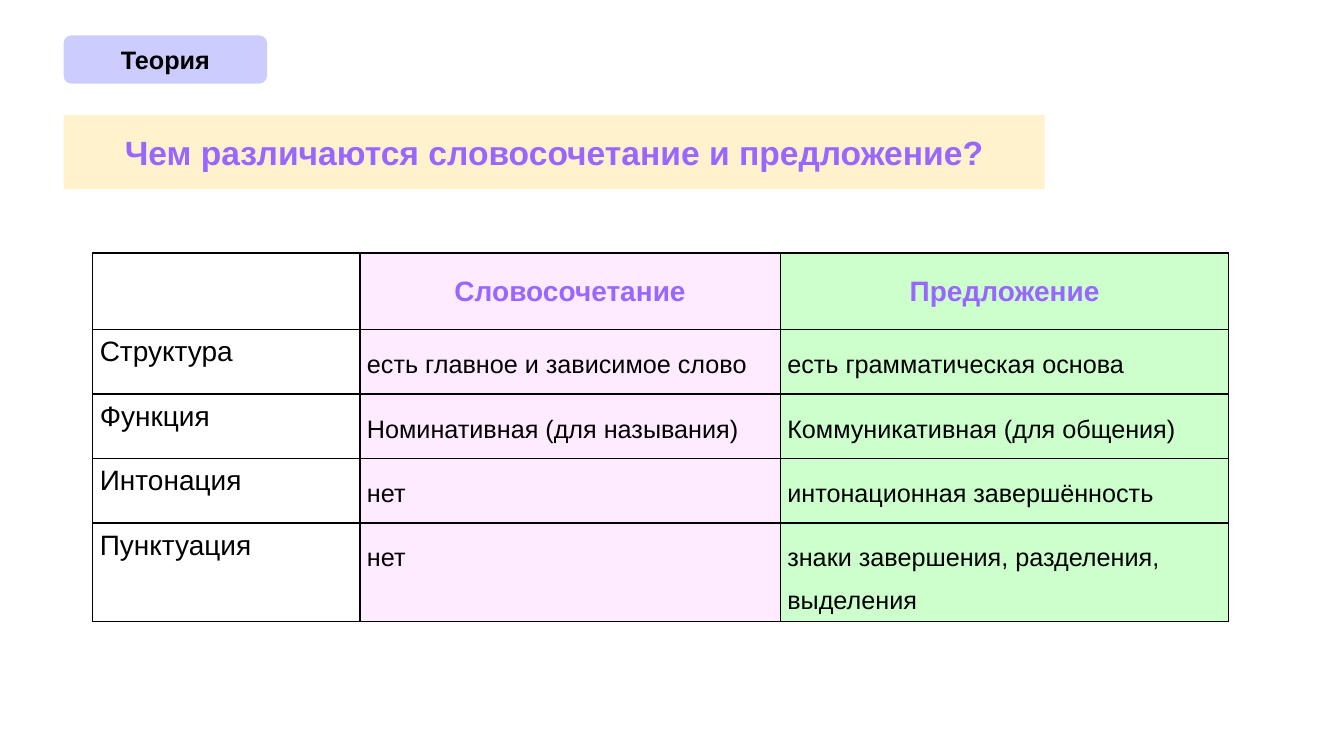
from dataclasses import dataclass

from lxml import etree
from pptx import Presentation
from pptx.dml.color import RGBColor
from pptx.enum.shapes import MSO_SHAPE
from pptx.enum.text import MSO_ANCHOR, MSO_AUTO_SIZE, PP_ALIGN
from pptx.oxml.ns import qn
from pptx.shapes.autoshape import Shape
from pptx.slide import Slide
from pptx.table import _Cell
from pptx.text.text import TextFrame
from pptx.util import Inches, Pt

BLACK = RGBColor(0x00, 0x00, 0x00)
VIOLET = RGBColor(0x99, 0x66, 0xFF)
LAVENDER = RGBColor(0xCC, 0xCC, 0xFF)
CREAM = RGBColor(0xFF, 0xF2, 0xCC)
PINK = RGBColor(0xFF, 0xEB, 0xFF)
GREEN = RGBColor(0xCC, 0xFF, 0xCC)

ROUNDED = MSO_SHAPE.ROUNDED_RECTANGLE
TOP = MSO_ANCHOR.TOP
MIDDLE = MSO_ANCHOR.MIDDLE
LEFT = PP_ALIGN.LEFT
CENTER = PP_ALIGN.CENTER
NO_AUTOFIT = MSO_AUTO_SIZE.NONE

FONT = "Arial"
WIDTH = Inches(13.33)
HEIGHT = Inches(7.5)
TITLE_ONLY = 5
CELL_INSET = Inches(0.07)
BORDER_WIDTH = Pt(1)


@dataclass(frozen=True)
class Area:
    left: float
    top: float
    width: float
    height: float

    def lengths(self) -> tuple[int, int, int, int]:
        return across(self.left), down(self.top), across(self.width), down(self.height)


@dataclass(frozen=True)
class Style:
    size: int
    color: RGBColor = BLACK
    bold: bool = False
    align: PP_ALIGN = LEFT
    anchor: MSO_ANCHOR = TOP
    line_spacing: float = 1.0


@dataclass(frozen=True)
class Column:
    width: float
    fill: RGBColor | None
    body: Style


TAG_AREA = Area(4.73, 4.67, 15.15, 6.4)
TITLE_AREA = Area(4.73, 15.2, 73, 9.87)
TABLE_LEFT, TABLE_TOP = 6.9, 33.47
ROW_HEIGHTS = [10.13, 8.53, 8.53, 8.53, 12.93]

TAG = Style(18, BLACK, True, CENTER, MIDDLE)
TITLE = Style(24, VIOLET, True, CENTER, MIDDLE)
HEADING = Style(20, VIOLET, True, CENTER, MIDDLE)
FEATURE = Style(20)
ANSWER = Style(18, line_spacing=1.5)

COLUMNS = [
    Column(19.88, None, FEATURE),
    Column(31.28, PINK, ANSWER),
    Column(33.38, GREEN, ANSWER),
]
ROWS = [
    ("", "Словосочетание", "Предложение"),
    ("Структура", "есть главное и зависимое слово", "есть грамматическая основа"),
    ("Функция", "Номинативная (для называния)", "Коммуникативная (для общения)"),
    ("Интонация", "нет", "интонационная завершённость"),
    ("Пунктуация", "нет", "знаки завершения, разделения, выделения"),
]


def across(percent: float) -> int:
    return round(WIDTH * percent / 100)


def down(percent: float) -> int:
    return round(HEIGHT * percent / 100)


def write(frame: TextFrame, text: str, style: Style) -> None:
    para = frame.paragraphs[0]
    para.alignment = style.align
    para.line_spacing = style.line_spacing
    span = para.add_run()
    span.text = text
    span.font.name = FONT
    span.font.size = Pt(style.size)
    span.font.bold = style.bold
    span.font.color.rgb = style.color


def format_box(box: Shape, text: str, style: Style, fill: RGBColor) -> None:
    box.fill.solid()
    box.fill.fore_color.rgb = fill
    box.line.fill.background()
    frame = box.text_frame
    frame.word_wrap = True
    frame.auto_size = NO_AUTOFIT
    frame.vertical_anchor = style.anchor
    write(frame, text, style)


def add_borders(cell: _Cell) -> None:
    properties = cell._tc.get_or_add_tcPr()
    for position, side in enumerate(("a:lnL", "a:lnR", "a:lnT", "a:lnB")):
        line = etree.Element(qn(side), w=str(BORDER_WIDTH))
        fill = etree.SubElement(line, qn("a:solidFill"))
        etree.SubElement(fill, qn("a:srgbClr"), val=str(BLACK))
        properties.insert(position, line)


def format_cell(cell: _Cell, text: str, style: Style, fill: RGBColor | None) -> None:
    cell.margin_left = cell.margin_right = CELL_INSET
    cell.margin_top = cell.margin_bottom = CELL_INSET
    cell.vertical_anchor = style.anchor
    if fill is None:
        cell.fill.background()
    else:
        cell.fill.solid()
        cell.fill.fore_color.rgb = fill
    add_borders(cell)
    if text:
        write(cell.text_frame, text, style)


def add_comparison(page: Slide) -> None:
    area = Area(TABLE_LEFT, TABLE_TOP, sum(c.width for c in COLUMNS), sum(ROW_HEIGHTS))
    table = page.shapes.add_table(len(ROWS), len(COLUMNS), *area.lengths()).table
    table.first_row = False
    table.horz_banding = False
    for index, column in enumerate(COLUMNS):
        table.columns[index].width = across(column.width)
    for row, (height, texts) in enumerate(zip(ROW_HEIGHTS, ROWS)):
        table.rows[row].height = down(height)
        for index, (column, text) in enumerate(zip(COLUMNS, texts)):
            style = column.body if row else HEADING
            format_cell(table.cell(row, index), text, style, column.fill)


def main() -> None:
    deck = Presentation()
    deck.slide_width, deck.slide_height = WIDTH, HEIGHT
    page = deck.slides.add_slide(deck.slide_layouts[TITLE_ONLY])

    title = page.shapes.title
    title.left, title.top, title.width, title.height = TITLE_AREA.lengths()
    format_box(title, "Чем различаются словосочетание и предложение?", TITLE, CREAM)

    tag = page.shapes.add_shape(ROUNDED, *TAG_AREA.lengths())
    tag.shadow.inherit = False
    format_box(tag, "Теория", TAG, LAVENDER)

    add_comparison(page)
    deck.save("out.pptx")


if __name__ == "__main__":
    main()
